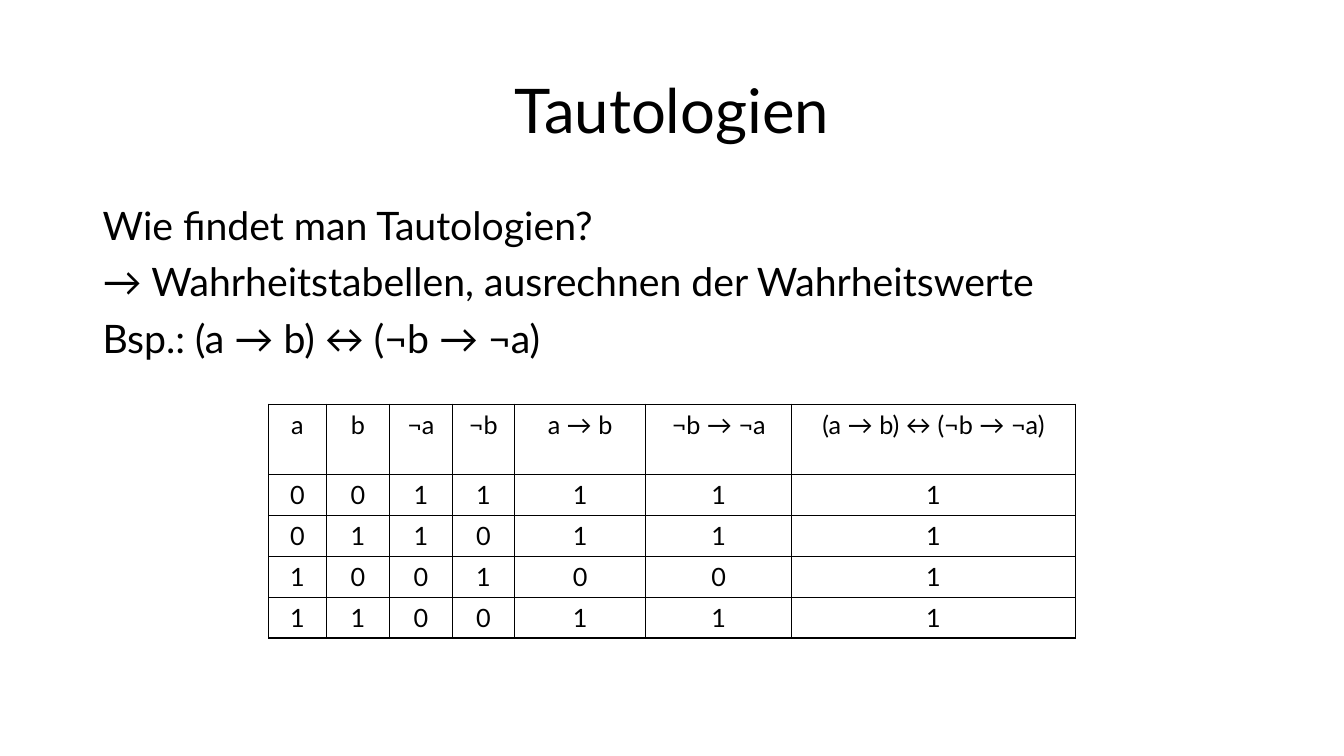
"""Build a slide that proves a tautology with a truth table."""
from lxml import etree
from pptx import Presentation
from pptx import util as u
from pptx.dml.color import RGBColor
from pptx.enum import text
from pptx.oxml.ns import qn

HEADING = ["Tautologien"]
QUESTION = [
    "Wie findet man Tautologien?",
    "→ Wahrheitstabellen, ausrechnen der Wahrheitswerte",
    "Bsp.: (a → b) ↔ (¬b → ¬a)",
]
TRUTH = [
    ("a", "b", "¬a", "¬b", "a → b", "¬b → ¬a", "(a → b) ↔ (¬b → ¬a)"),
    "0011111",
    "0110111",
    "1001001",
    "1100111",
]
COLUMNS = (0.57, 0.63, 0.62, 0.62, 1.3, 1.45, 2.81)
ROWS = (0.7,) + (0.405,) * 4
WIDTH, HEIGHT, MARGIN = 13.33, 7.5, 0.92
TABLE_TOP = 4.01
FONT = "Lato"
BLACK = RGBColor(0, 0, 0)


def style(paragraph, size, align):
    paragraph.alignment = align
    paragraph.font.name = FONT
    paragraph.font.size = u.Pt(size)
    paragraph.font.color.rgb = BLACK


def add_lines(slide, lines, top, height, size, align, anchor, before=0):
    box = slide.shapes.add_textbox(
        u.Inches(MARGIN), u.Inches(top), u.Inches(WIDTH - 2 * MARGIN), u.Inches(height))
    frame = box.text_frame
    frame.word_wrap = True
    frame.vertical_anchor = anchor
    frame.text = "\n".join(lines)
    for paragraph in frame.paragraphs:
        style(paragraph, size, align)
        paragraph.line_spacing = 0.9
        paragraph.space_before = u.Pt(before)


def add_borders(cell):
    properties = cell._tc.get_or_add_tcPr()
    for position, side in enumerate(("lnL", "lnR", "lnT", "lnB")):
        line = etree.Element(qn("a:" + side), w=str(u.Pt(1)))
        fill = etree.SubElement(line, qn("a:solidFill"))
        etree.SubElement(fill, qn("a:srgbClr"), val=str(BLACK))
        properties.insert(position, line)


def add_truth_table(slide):
    width = sum(COLUMNS)
    table = slide.shapes.add_table(
        len(ROWS), len(COLUMNS), u.Inches((WIDTH - width) / 2), u.Inches(TABLE_TOP),
        u.Inches(width), u.Inches(sum(ROWS))).table
    table.first_row = table.horz_banding = False
    for column, share in zip(table.columns, COLUMNS):
        column.width = u.Inches(share)
    for row, height, values in zip(table.rows, ROWS, TRUTH):
        row.height = u.Inches(height)
        for cell, value in zip(row.cells, values):
            cell.text = value
            cell.fill.background()
            style(cell.text_frame.paragraphs[0], 18, text.PP_ALIGN.CENTER)
            add_borders(cell)


def main():
    deck = Presentation()
    deck.slide_width, deck.slide_height = u.Inches(WIDTH), u.Inches(HEIGHT)
    slide = deck.slides.add_slide(deck.slide_layouts[6])
    add_lines(slide, HEADING, 0.4, 1.45, 44,
              text.PP_ALIGN.CENTER, text.MSO_ANCHOR.MIDDLE)
    add_lines(slide, QUESTION, 2, 4.76, 28,
              text.PP_ALIGN.LEFT, text.MSO_ANCHOR.TOP, before=10)
    add_truth_table(slide)
    deck.save("out.pptx")


if __name__ == "__main__":
    main()
